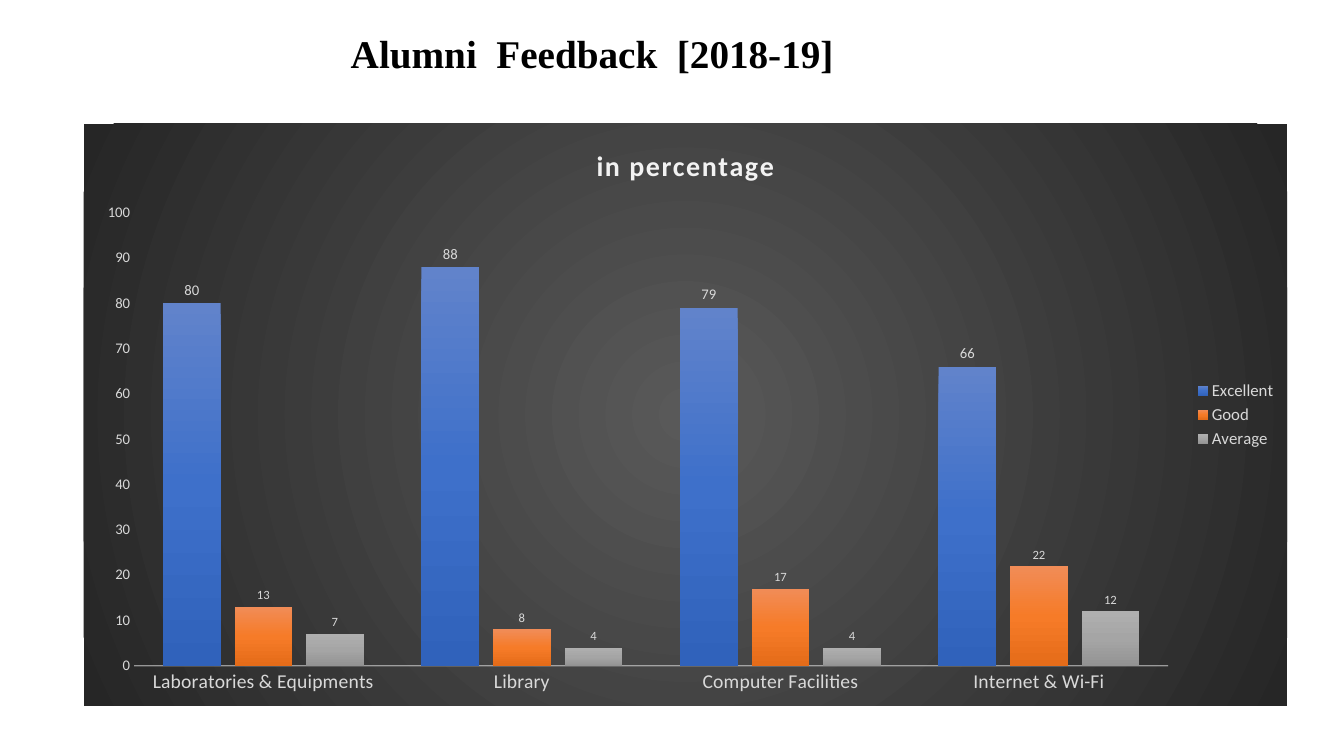
from dataclasses import dataclass

from pptx import Presentation
from pptx import util as u
from pptx.chart import data
from pptx.dml.color import RGBColor
from pptx.enum import chart as ch
from pptx.enum import text
from pptx.oxml import ns, parse_xml

SANS = "Calibri"
PALE = "D9D9D9"
LIGHT = "F2F2F2"
ROUND = ('<a:path path="circle"><a:fillToRect l="50000" t="50000" '
         'r="50000" b="50000"/></a:path>')
DOWN = '<a:lin ang="5400000" scaled="0"/>'


@dataclass
class Rating:
    name: str
    values: tuple[int, ...]
    stops: tuple[str, ...]
    size: float


TOPICS = ("Laboratories & Equipments", "Library",
          "Computer Facilities", "Internet & Wi-Fi")
RATINGS = (
    Rating("Excellent", (80, 88, 79, 66), ("6183CB", "3E70CA", "3062BB"), 10.5),
    Rating("Good", (13, 8, 17, 22), ("F18C57", "F67B28", "E56C19"), 9),
    Rating("Average", (7, 4, 4, 12), ("AFAFAF", "A5A5A5", "939393"), 9),
)


def style(font, size: float, shade: str, face: str = SANS, bold: bool = False) -> None:
    font.size = u.Pt(size)
    font.name = face
    font.bold = bold
    font.color.rgb = RGBColor.from_string(shade)


def blend(stops: tuple[str, ...], way: str):
    step = 100000 // (len(stops) - 1)
    marks = "".join(f'<a:gs pos="{i * step}"><a:srgbClr val="{shade}"/></a:gs>'
                    for i, shade in enumerate(stops))
    return parse_xml(f'<a:gradFill {ns.nsdecls("a")} rotWithShape="1">'
                     f'<a:gsLst>{marks}</a:gsLst>{way}</a:gradFill>')


def add_head(slide) -> None:
    box = slide.shapes.add_textbox(u.Cm(8.59), u.Cm(0.61), u.Cm(14.81), u.Cm(1.45))
    frame = box.text_frame
    frame.word_wrap = True
    frame.auto_size = text.MSO_AUTO_SIZE.SHAPE_TO_FIT_TEXT
    frame.text = "Alumni  Feedback  [2018-19]"
    style(frame.paragraphs[0].runs[0].font, 28, "000000", "Times New Roman", True)


def add_bars(slide):
    table = data.CategoryChartData()
    table.categories = TOPICS
    for rating in RATINGS:
        table.add_series(rating.name, rating.values)
    chart = slide.shapes.add_chart(
        ch.XL_CHART_TYPE.COLUMN_CLUSTERED, u.Cm(2.11), u.Cm(3.12),
        u.Cm(30.33), u.Cm(14.66), table).chart
    style(chart.font, 10, "000000")
    plot = chart.plots[0]
    plot.gap_width = 100
    plot.overlap = -24
    plot.vary_by_categories = False
    for rating, bars in zip(RATINGS, plot.series):
        bars.format.element.get_or_add_spPr().insert(0, blend(rating.stops, DOWN))
        labels = bars.data_labels
        labels.show_value = True
        labels.position = ch.XL_LABEL_POSITION.OUTSIDE_END
        style(labels.font, rating.size, PALE)
    return chart


def dress(chart) -> None:
    chart.has_title = True
    frame = chart.chart_title.text_frame
    frame.text = "in percentage"
    font = frame.paragraphs[0].runs[0].font
    style(font, 20, LIGHT, bold=True)
    frame.paragraphs[0].runs[0]._r.get_or_add_rPr().set("spc", "100")
    chart.chart_title.include_in_layout = False

    chart.has_legend = True
    chart.legend.position = ch.XL_LEGEND_POSITION.RIGHT
    chart.legend.include_in_layout = False
    style(chart.legend.font, 12, PALE)

    for axis, size in ((chart.category_axis, 14), (chart.value_axis, 10.5)):
        axis.has_major_gridlines = False
        axis.major_tick_mark = ch.XL_TICK_MARK.NONE
        axis.minor_tick_mark = ch.XL_TICK_MARK.NONE
        style(axis.tick_labels.font, size, PALE)
    chart.value_axis.minimum_scale = 0
    chart.value_axis.maximum_scale = 100
    chart.value_axis.major_unit = 10
    chart.value_axis.format.line.fill.background()

    line = chart.category_axis.format.line
    line.width = u.Pt(1)
    line.color.rgb = RGBColor.from_string(LIGHT)
    for tint in chart.category_axis.format.element.spPr.iter(ns.qn("a:srgbClr")):
        tint.append(parse_xml(f'<a:alpha {ns.nsdecls("a")} val="54000"/>'))

    back = parse_xml(f'<c:spPr {ns.nsdecls("c", "a")}><a:ln><a:noFill/></a:ln></c:spPr>')
    back.insert(0, blend(("595959", "262626"), ROUND))
    chart.element.find(ns.qn("c:chart")).addnext(back)


def main() -> None:
    deck = Presentation()
    deck.slide_width = u.Cm(33.87)
    deck.slide_height = u.Cm(19.05)
    slide = deck.slides.add_slide(deck.slide_layouts[6])
    dress(add_bars(slide))
    add_head(slide)
    deck.save("out.pptx")


if __name__ == "__main__":
    main()
